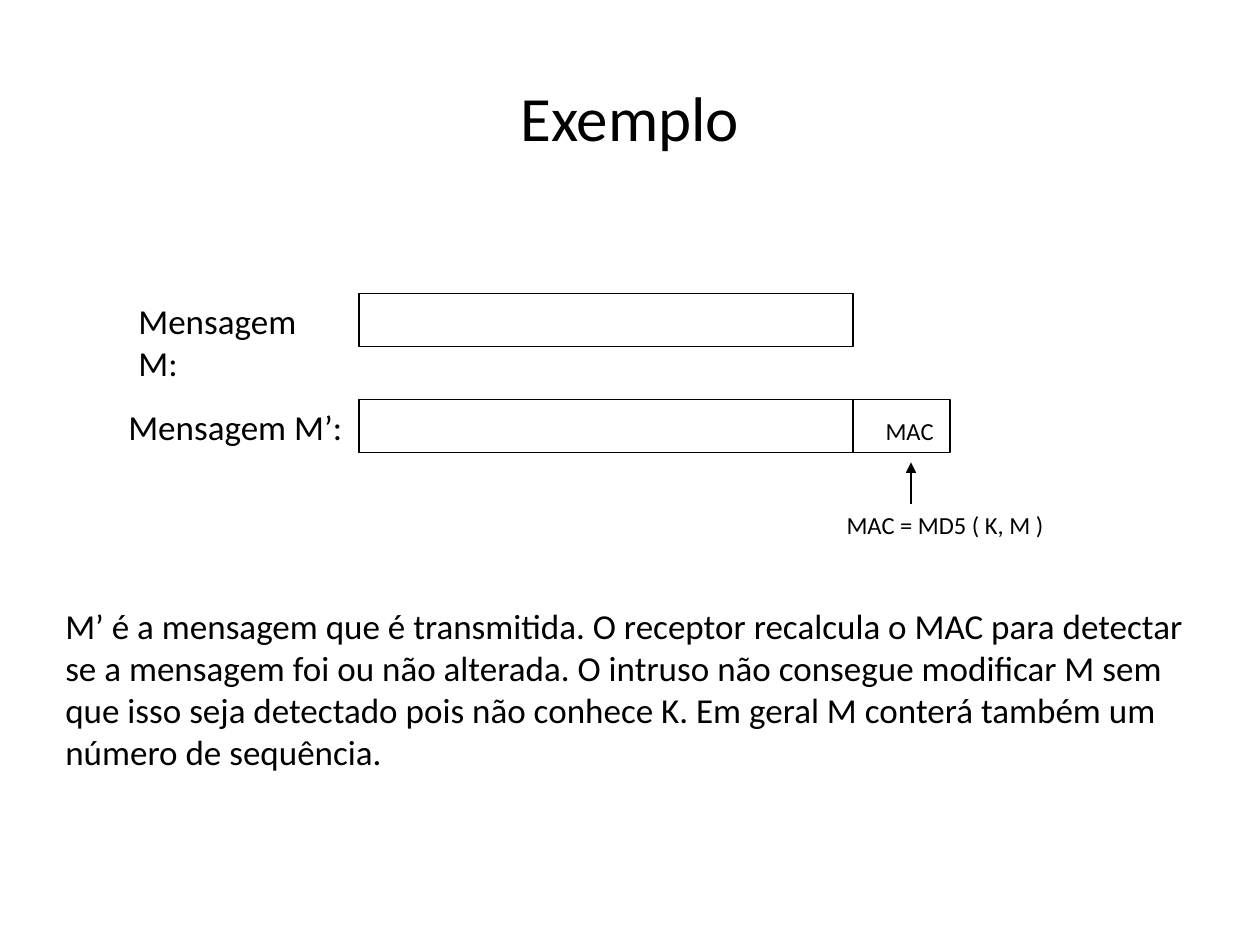
from dataclasses import dataclass

from lxml import etree
from pptx import Presentation
from pptx import util as u
from pptx.dml.color import RGBColor
from pptx.enum import shapes, text
from pptx.oxml.ns import qn


@dataclass(frozen=True)
class Theme:
    font: str = "Calibri"
    ink: RGBColor = RGBColor(0, 0, 0)
    title_size: int = 36
    body_size: int = 20
    small_size: int = 14
    line_width: float = 0.75


class SlideBuilder:
    def __init__(self, slide, theme):
        self.slide = slide
        self.theme = theme

    def format_text(self, frame, size, alignment):
        for paragraph in frame.paragraphs:
            paragraph.alignment = alignment
            for run in paragraph.runs:
                run.font.name = self.theme.font
                run.font.size = u.Pt(size)
                run.font.color.rgb = self.theme.ink

    def title(self, wording, left, top, width, height):
        title = self.slide.shapes.title
        title.left, title.top = u.Inches(left), u.Inches(top)
        title.width, title.height = u.Inches(width), u.Inches(height)
        frame = title.text_frame
        frame.text = wording
        frame.vertical_anchor = text.MSO_ANCHOR.MIDDLE
        self.format_text(frame, self.theme.title_size, text.PP_ALIGN.CENTER)

    def label(self, wording, left, top, width, height, size, wrap=True):
        box = self.slide.shapes.add_textbox(
            u.Inches(left), u.Inches(top), u.Inches(width), u.Inches(height))
        frame = box.text_frame
        frame.text = wording
        frame.word_wrap = wrap
        frame.auto_size = text.MSO_AUTO_SIZE.SHAPE_TO_FIT_TEXT
        self.format_text(frame, size, text.PP_ALIGN.LEFT)

    def field(self, left, top, width, height):
        """Draw one unfilled field of a message."""
        shape = self.slide.shapes.add_shape(
            shapes.MSO_SHAPE.RECTANGLE,
            u.Inches(left), u.Inches(top), u.Inches(width), u.Inches(height))
        shape.shadow.inherit = False
        shape.fill.background()
        self.style_line(shape.line)

    def arrow(self, start, end):
        connector = self.slide.shapes.add_connector(
            shapes.MSO_CONNECTOR.STRAIGHT,
            *(u.Inches(value) for value in (*start, *end)))
        self.style_line(connector.line)
        properties = connector.element.spPr
        line = properties.find(qn("a:ln"))
        etree.SubElement(line, qn("a:tailEnd"), type="triangle")
        etree.SubElement(properties, qn("a:effectLst"))

    def style_line(self, line):
        line.color.rgb = self.theme.ink
        line.width = u.Pt(self.theme.line_width)


def main():
    presentation = Presentation()
    presentation.slide_width = u.Inches(10)
    presentation.slide_height = u.Inches(7.5)
    slide = presentation.slides.add_slide(presentation.slide_layouts[5])
    theme = Theme()
    builder = SlideBuilder(slide, theme)

    message_left, message_width, field_height = 2.85, 3.92, 0.42
    message_top, sent_top = 2.33, 3.17
    mac_left, mac_width = message_left + message_width, 0.77

    builder.title("Exemplo", 0.5, 0.3, 9, 1.25)

    builder.label("Mensagem M:", 1, message_top, 1.76, 0.44, theme.body_size)
    builder.field(message_left, message_top, message_width, field_height)

    builder.label("Mensagem M’:", 0.92, sent_top, 1.9, 0.44,
                  theme.body_size, wrap=False)
    builder.field(message_left, sent_top, message_width, field_height)
    builder.field(mac_left, sent_top, mac_width, field_height)
    builder.label("MAC", 6.93, 3.25, 0.6, 0.34, theme.small_size, wrap=False)

    builder.arrow((7.23, 4), (7.23, 3.67))
    builder.label("MAC = MD5 ( K, M )", 6.62, 4, 2.85, 0.33, theme.small_size)

    builder.label(
        "M’ é a mensagem que é transmitida. O receptor recalcula o MAC para "
        "detectar se a mensagem foi ou não alterada. O intruso não consegue "
        "modificar M sem que isso seja detectado pois não conhece K. Em geral "
        "M conterá também um número de sequência.",
        0.42, 4.75, 9.17, 1.43, theme.body_size)

    presentation.save("out.pptx")


if __name__ == "__main__":
    main()
